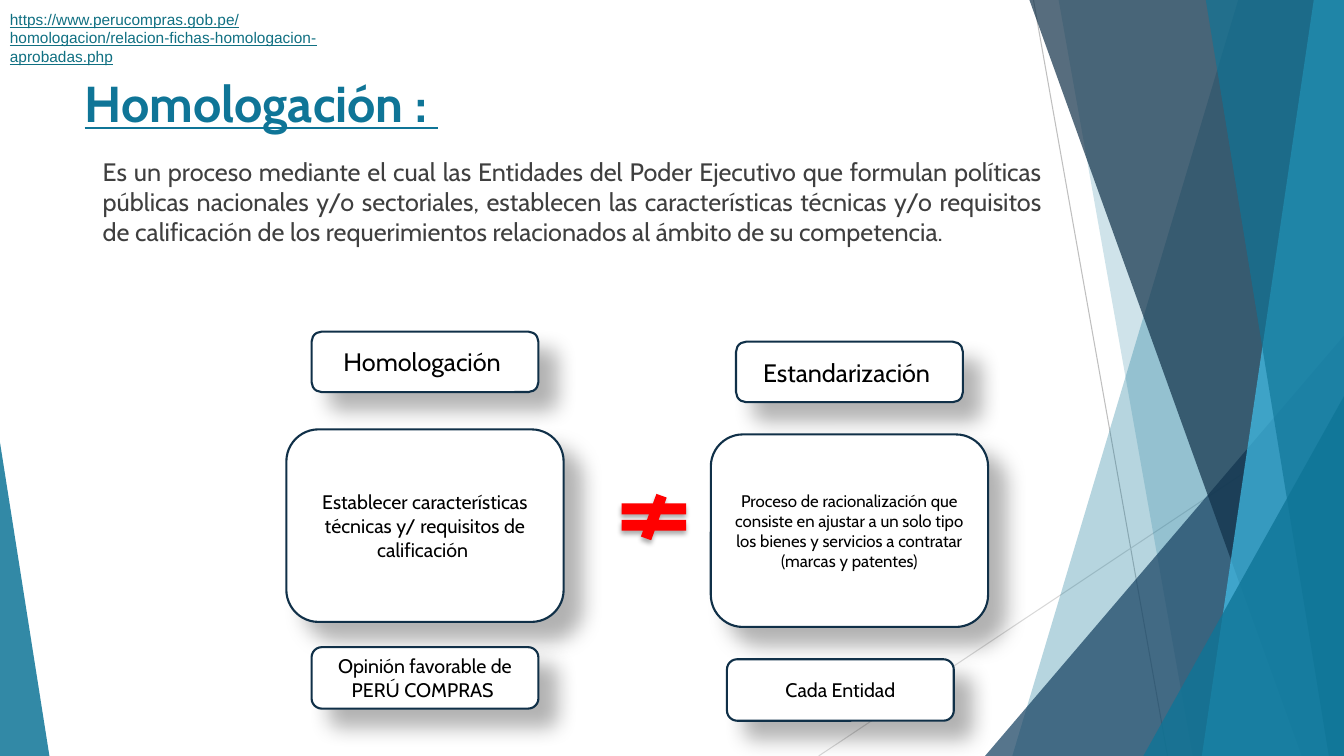
from dataclasses import dataclass

from lxml.etree import SubElement
from pptx import Presentation
from pptx.dml.color import RGBColor
from pptx.enum.shapes import MSO_CONNECTOR as CONN, MSO_SHAPE as SHAPE
from pptx.enum.text import MSO_ANCHOR as ANCHOR, PP_ALIGN as ALIGN
from pptx.oxml.ns import qn
from pptx.util import Inches, Pt

WIDTH, HEIGHT = 13.33, 7.5


@dataclass(frozen=True)
class Theme:
    font: str = "Cabin"
    link_font: str = "Arial"
    teal: str = "0F7597"
    steel: str = "164161"
    navy: str = "103048"
    sky: str = "42C2EC"
    red: str = "FF0000"
    white: str = "FFFFFF"
    black: str = "000000"
    body: str = "3F3F3F"
    link: str = "107082"
    gray: str = "BFBFBF"
    light_gray: str = "D8D8D8"
    title_size: int = 36
    text_size: int = 18
    box_size: int = 14
    small_size: int = 12
    link_size: int = 11


class SlideBuilder:
    def __init__(self, slide, theme):
        self.s = slide
        self.theme = theme

    def paint(self, sp, color, alpha=100):
        sp.shadow.inherit = False
        sp.line.fill.background()
        sp.fill.solid()
        sp.fill.fore_color.rgb = RGBColor.from_string(color)
        if alpha < 100:
            clr = sp._element.spPr.find(qn("a:solidFill"))[0]
            SubElement(clr, qn("a:alpha"), val=str(alpha * 1000))

    def cast_shadow(self, sp, alpha, blur, dist, angle):
        effects = sp._element.spPr.find(qn("a:effectLst"))
        shadow = SubElement(
            effects, qn("a:outerShdw"), blurRad=str(Pt(blur)), dist=str(Pt(dist)),
            dir=str(angle * 60000), algn="ctr", rotWithShape="0")
        clr = SubElement(shadow, qn("a:srgbClr"), val=self.theme.black)
        SubElement(clr, qn("a:alpha"), val=str(alpha * 1000))

    def line(self, start, end, color):
        points = [Inches(v) for v in (*start, *end)]
        sp = self.s.shapes.add_connector(CONN.STRAIGHT, *points)
        sp.line.color.rgb = RGBColor.from_string(color)
        sp.line.width = Pt(0.75)
        SubElement(sp._element.spPr, qn("a:effectLst"))

    def band(self, top_left, bottom_left, color, alpha):
        corners = [(top_left, 0), (WIDTH, 0), (WIDTH, HEIGHT), (bottom_left, HEIGHT)]
        points = [(Inches(x), Inches(y)) for x, y in corners]
        builder = self.s.shapes.build_freeform(*points[0])
        builder.add_line_segments(points[1:], close=True)
        self.paint(builder.convert_to_shape(), color, alpha)

    def shape(self, kind, box, color, alpha=100, adjustments=()):
        sp = self.s.shapes.add_shape(kind, *map(Inches, box))
        for i, value in enumerate(adjustments):
            sp.adjustments[i] = value
        self.paint(sp, color, alpha)
        return sp

    def fill_text(self, sp, text, size, color, align, font=None, bold=False, underline=False):
        tf = sp.text_frame
        tf.word_wrap = True
        p = tf.paragraphs[0]
        p.text = text
        p.alignment = align
        p.font.name = font or self.theme.font
        p.font.size = Pt(size)
        p.font.bold = bold
        p.font.underline = underline
        p.font.color.rgb = RGBColor.from_string(color)
        return tf

    def text(self, box, text, size, color, align=ALIGN.LEFT, **style):
        sp = self.s.shapes.add_textbox(*map(Inches, box))
        return self.fill_text(sp, text, size, color, align, **style)

    def card(self, box, text, size):
        t = self.theme
        sp = self.shape(SHAPE.ROUNDED_RECTANGLE, box, t.white)
        sp.line.color.rgb = RGBColor.from_string(t.navy)
        sp.line.width = Pt(1.5)
        self.cast_shadow(sp, 30, 15, 18, 45)
        tf = self.fill_text(sp, text, size, t.black, ALIGN.CENTER)
        tf.vertical_anchor = ANCHOR.MIDDLE


def draw_background(b):
    t = b.theme
    b.line((10.25, 0), (11.58, HEIGHT), t.gray)
    b.line((WIDTH, 4.03), (8.12, HEIGHT), t.light_gray)
    b.band(12.28, 10.04, t.teal, 30)
    b.band(10.5, 11.83, t.teal, 20)
    b.shape(SHAPE.ISOSCELES_TRIANGLE, (9.77, 3.33, 3.56, 4.17), t.steel, 72, [1])
    b.band(10.21, 12.91, t.navy, 70)
    b.band(13.03, 11.92, t.sky, 70)
    b.band(11.96, 13.18, t.teal, 65)
    b.shape(SHAPE.ISOSCELES_TRIANGLE, (11.34, 3.93, 1.99, 3.57), t.teal, 80, [1])
    b.shape(SHAPE.ISOSCELES_TRIANGLE, (0, 4.39, 0.49, 3.11), t.teal, 85, [0])


def draw_content(b):
    t = b.theme
    b.text((0.74, 0.67, 9.4, 1.44), "Homologación : ", t.title_size, t.teal,
           bold=True, underline=True)
    b.text((0.92, 1.5, 9.51, 1.57),
           "Es un proceso mediante el cual las Entidades del Poder Ejecutivo que formulan "
           "políticas públicas nacionales y/o sectoriales, establecen las características "
           "técnicas y/o requisitos de calificación de los requerimientos relacionados al "
           "ámbito de su competencia.", t.text_size, t.body, ALIGN.JUSTIFY)

    cards = [
        (3.09, 3.29, 2.25, 0.6, "Homologación ", t.text_size),
        (7.3, 3.39, 2.25, 0.6, "Estandarización ", t.text_size),
        (2.84, 4.26, 2.75, 1.91,
         "Establecer características técnicas y/ requisitos de calificación ", t.box_size),
        (7.05, 4.31, 2.75, 1.91,
         "Proceso de racionalización que consiste en ajustar a un solo tipo los bienes y "
         "servicios a contratar (marcas y patentes)", t.small_size),
        (3.09, 6.42, 2.25, 0.61, "Opinión favorable de PERÚ COMPRAS ", t.box_size),
        (7.21, 6.54, 2.25, 0.61, "Cada Entidad", t.box_size),
    ]
    for *box, text, size in cards:
        b.card(box, text, size)

    sign = b.shape(SHAPE.MATH_NOT_EQUAL, (6.05, 4.9, 0.87, 0.46), t.red,
                   adjustments=[0.235, 66, 0.118])
    b.cast_shadow(sign, 32, 3.5, 2.2, 90)

    tf = b.text((0, 0, 3.28, 3.28),
                "https://www.perucompras.gob.pe/homologacion/"
                "relacion-fichas-homologacion-aprobadas.php",
                t.link_size, t.link, font=t.link_font, underline=True)
    tf.margin_top = tf.margin_bottom = Inches(0.1)


def main():
    prs = Presentation()
    prs.slide_width, prs.slide_height = Inches(WIDTH), Inches(HEIGHT)
    b = SlideBuilder(prs.slides.add_slide(prs.slide_layouts[6]), Theme())
    draw_background(b)
    draw_content(b)
    prs.save("out.pptx")


if __name__ == "__main__":
    main()
